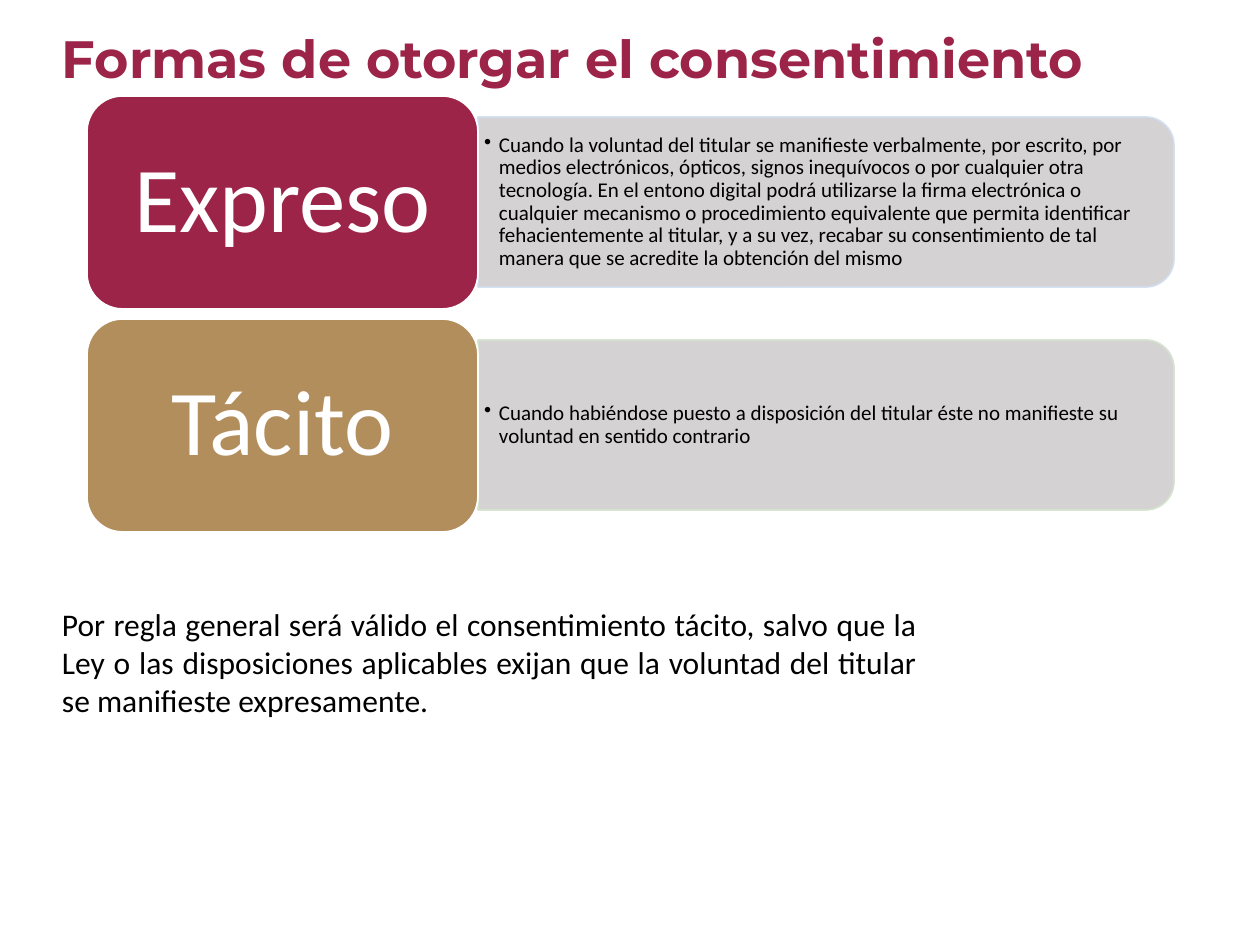
import dataclasses
import typing

import lxml.etree
import pptx
import pptx.dml.color
import pptx.enum.shapes
import pptx.enum.text
import pptx.oxml.ns
import pptx.util

EMU_PER_PX = 914400 / 126
COLORS = {
    "wine": "9D2449",
    "gold": "B38E5D",
    "grey": "D0CECE",
    "blue_edge": "D2DEEF",
    "green_edge": "D5E3CF",
    "white": "FFFFFF",
    "black": "000000",
}
ALIGN = pptx.enum.text.PP_ALIGN
ANCHOR = pptx.enum.text.MSO_ANCHOR
SHAPE = pptx.enum.shapes.MSO_SHAPE

CARD_LEFT, CARD_TOP, CARD_WIDTH, CARD_HEIGHT = 87, 96, 391, 213
ROW_PITCH = 223
PANEL_WIDTH, PANEL_HEIGHT = 696, 170
CARD_INSET = 10
DEFINITION_WIDTH, DEFINITION_HEIGHT = 687, 154
BULLET_INDENT = 15


class Box(typing.NamedTuple):
    left: int
    top: int
    width: int
    height: int


@dataclasses.dataclass
class Consent:
    name: str
    definition: str
    color: str
    edge: str


CONSENTS = [
    Consent(
        "Expreso",
        "Cuando la voluntad del titular se manifieste verbalmente, por escrito, por "
        "medios electrónicos, ópticos, signos inequívocos o por cualquier otra "
        "tecnología. En el entono digital podrá utilizarse la firma electrónica o "
        "cualquier mecanismo o procedimiento equivalente que permita identificar "
        "fehacientemente al titular, y a su vez, recabar su consentimiento de tal "
        "manera que se acredite la obtención del mismo",
        "wine",
        "blue_edge",
    ),
    Consent(
        "Tácito",
        "Cuando habiéndose puesto a disposición del titular éste no manifieste su "
        "voluntad en sentido contrario",
        "gold",
        "green_edge",
    ),
]


def px(length: int) -> int:
    return round(length * EMU_PER_PX)


def rgb(color: str) -> pptx.dml.color.RGBColor:
    return pptx.dml.color.RGBColor.from_string(COLORS[color])


def apply(target, values: dict) -> None:
    for attribute, value in values.items():
        setattr(target, attribute, value)


def add_block(slide, kind, box: Box, fill: str, edge: str):
    block = slide.shapes.add_shape(kind, *map(px, box))
    block.shadow.inherit = False
    block.fill.solid()
    block.fill.fore_color.rgb = rgb(fill)
    block.line.color.rgb = rgb(edge)
    block.line.width = pptx.util.Pt(1)
    return block


def set_opacity(block, percent: int) -> None:
    """Apply one opacity to both the fill and the outline."""
    for color in block._element.spPr.iter(pptx.oxml.ns.qn("a:srgbClr")):
        alpha = lxml.etree.SubElement(color, pptx.oxml.ns.qn("a:alpha"))
        alpha.set("val", str(percent * 1000))


def add_bullet(paragraph) -> None:
    properties = paragraph._p.get_or_add_pPr()
    properties.set("marL", str(px(BULLET_INDENT)))
    properties.set("indent", str(-px(BULLET_INDENT)))
    bullet = lxml.etree.SubElement(properties, pptx.oxml.ns.qn("a:buChar"))
    bullet.set("char", "•")


def add_text(slide, box: Box, text: str, font: dict, color: str,
             paragraph_format: dict, anchor=ANCHOR.MIDDLE,
             insets: tuple[int, int] = (13, 6), bulleted: bool = False) -> None:
    frame = slide.shapes.add_textbox(*map(px, box)).text_frame
    side, end = map(px, insets)
    apply(frame, {
        "word_wrap": True,
        "vertical_anchor": anchor,
        "margin_left": side,
        "margin_right": side,
        "margin_top": end,
        "margin_bottom": end,
    })
    paragraph = frame.paragraphs[0]
    if bulleted:
        add_bullet(paragraph)
    apply(paragraph, paragraph_format)
    run = paragraph.add_run()
    run.text = text
    apply(run.font, {"name": "Calibri", **font})
    run.font.color.rgb = rgb(color)


def add_consent(slide, consent: Consent, top: int) -> None:
    """Draw a definition panel and the name card at its left."""
    middle = top + CARD_HEIGHT // 2
    card_right = CARD_LEFT + CARD_WIDTH

    # The panel stands upright before its quarter turn, about the same centre.
    panel_box = Box(card_right + (PANEL_WIDTH - PANEL_HEIGHT) // 2,
                    middle - PANEL_WIDTH // 2, PANEL_HEIGHT, PANEL_WIDTH)
    panel = add_block(slide, SHAPE.ROUND_2_SAME_RECTANGLE, panel_box,
                      "grey", consent.edge)
    panel.rotation = 90
    set_opacity(panel, 90)
    definition_box = Box(card_right, middle - DEFINITION_HEIGHT // 2,
                         DEFINITION_WIDTH, DEFINITION_HEIGHT)
    add_text(slide, definition_box, consent.definition,
             {"size": pptx.util.Pt(12)}, "black",
             {"alignment": ALIGN.LEFT, "line_spacing": 0.9},
             insets=(6, 4), bulleted=True)

    card_box = Box(CARD_LEFT, top, CARD_WIDTH, CARD_HEIGHT)
    add_block(slide, SHAPE.ROUNDED_RECTANGLE, card_box, consent.color, "white")
    name_box = Box(CARD_LEFT + CARD_INSET, top + CARD_INSET,
                   CARD_WIDTH - 2 * CARD_INSET, CARD_HEIGHT - 2 * CARD_INSET)
    add_text(slide, name_box, consent.name,
             {"size": pptx.util.Pt(53)}, "white",
             {"alignment": ALIGN.CENTER, "line_spacing": 0.9}, insets=(28, 14))


def main() -> None:
    deck = pptx.Presentation()
    apply(deck, {"slide_width": px(1260), "slide_height": px(945)})
    slide = deck.slides.add_slide(deck.slide_layouts[6])

    add_text(slide, Box(49, 25, 1159, 71), "Formas de otorgar el consentimiento",
             {"name": "Montserrat", "size": pptx.util.Pt(30), "bold": True}, "wine",
             {"alignment": ALIGN.LEFT, "line_spacing": 0.9}, anchor=ANCHOR.BOTTOM)
    for row, consent in enumerate(CONSENTS):
        add_consent(slide, consent, CARD_TOP + row * ROW_PITCH)
    add_text(slide, Box(49, 599, 881, 127),
             "Por regla general será válido el consentimiento tácito, salvo que la "
             "Ley o las disposiciones aplicables exijan que la voluntad del titular "
             "se manifieste expresamente.",
             {"size": pptx.util.Pt(18)}, "black",
             {"alignment": ALIGN.JUSTIFY}, anchor=ANCHOR.TOP)

    deck.save("out.pptx")


if __name__ == "__main__":
    main()
